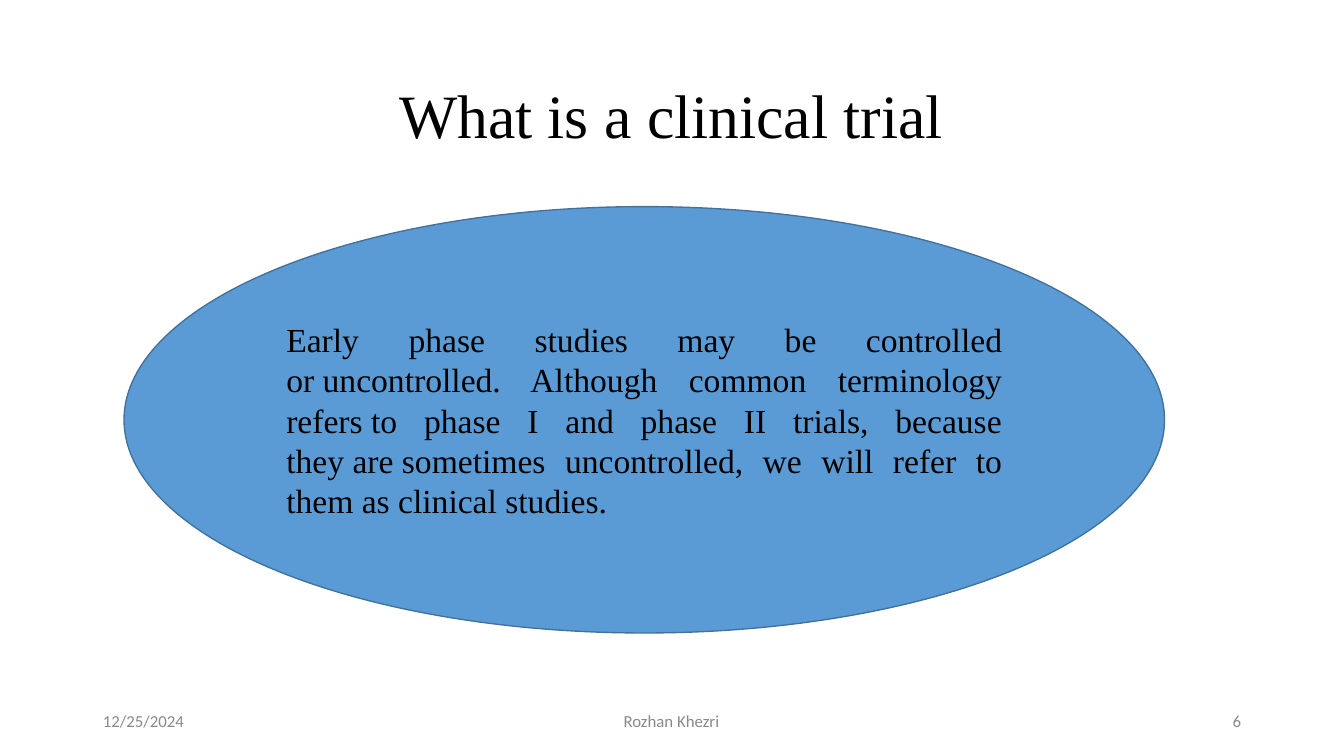
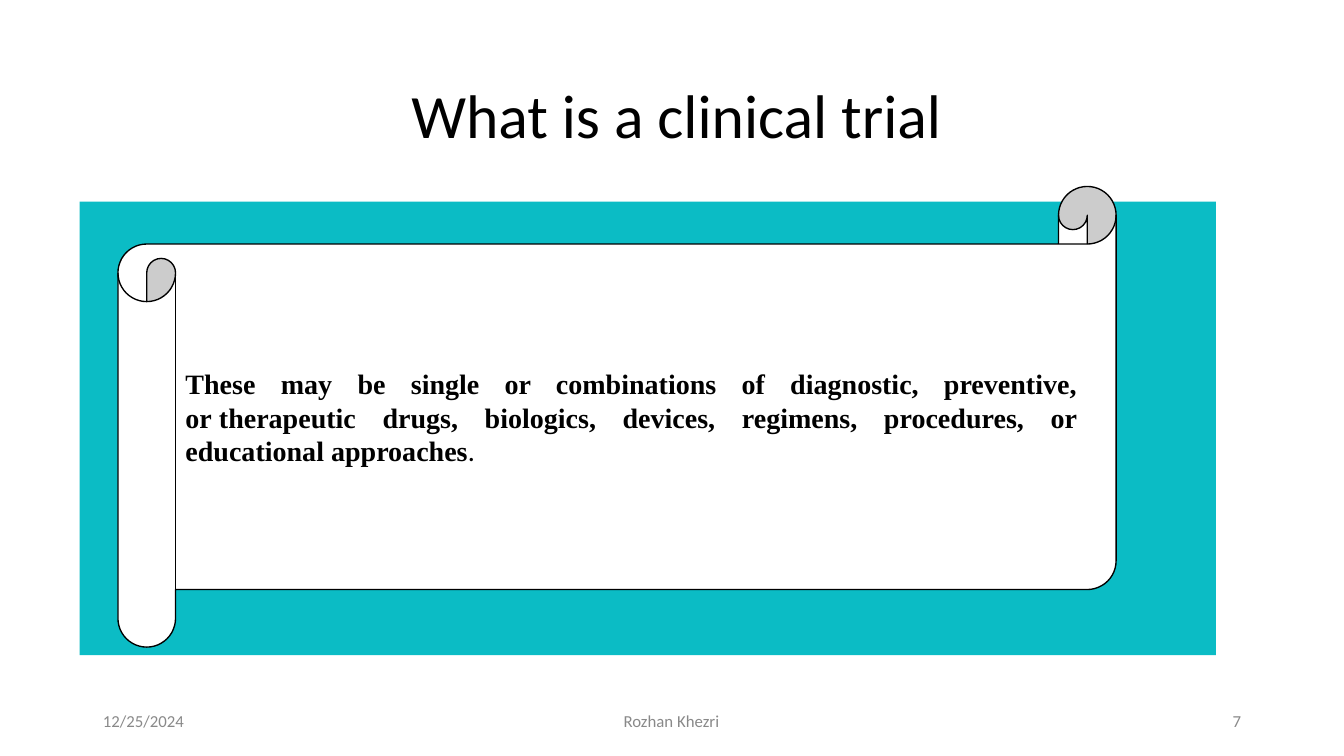
from pptx import Presentation
from pptx.dml.color import RGBColor
from pptx.enum.shapes import MSO_SHAPE
from pptx.enum.text import MSO_ANCHOR, PP_ALIGN
from pptx.util import Inches, Pt

SERIF, SANS = "Times New Roman", "Calibri"
BLACK, WHITE, GREY = "000000", "FFFFFF", "898989"
BLUE, NAVY, TEAL = "5B9BD5", "41719C", "0BBCC5"
TITLE = "What is a clinical trial"


def tint(code):
    """Turn a hex string into a colour."""
    return RGBColor.from_string(code)


def add_run(para, text, size, font=SANS, code=BLACK, bold=False):
    """Add one styled run, with ~ as a space that does not break."""
    run = para.add_run()
    run.text = text.replace("~", chr(160))
    run.font.size = Pt(size)
    run.font.name = font
    run.font.bold = bold
    run.font.color.rgb = tint(code)


def add_label(slide, box, text, size, font, code, align):
    """Add a single line of text without margins."""
    frame = slide.shapes.add_textbox(*map(Inches, box)).text_frame
    frame.word_wrap = True
    frame.margin_left = frame.margin_right = 0
    frame.margin_top = frame.margin_bottom = 0
    para = frame.paragraphs[0]
    para.alignment = align
    add_run(para, text, size, font, code)


def add_form(slide, kind, box, fill, line=None):
    """Add a filled preset shape, outlined if a line colour is given."""
    form = slide.shapes.add_shape(kind, *map(Inches, box))
    form.shadow.inherit = False
    form.fill.solid()
    form.fill.fore_color.rgb = tint(fill)
    if line:
        form.line.color.rgb = tint(line)
        form.line.width = Pt(0.96)
    else:
        form.line.fill.background()
    return form


def add_body(form, size, runs):
    """Write justified runs of (text, font, bold) inside a shape."""
    frame = form.text_frame
    frame.word_wrap = True
    frame.vertical_anchor = MSO_ANCHOR.MIDDLE
    para = frame.paragraphs[0]
    para.alignment = PP_ALIGN.JUSTIFY
    para.line_spacing = Pt(size * 1.2)
    for text, font, bold in runs:
        add_run(para, text, size, font, bold=bold)


def add_page(deck, number, font, left):
    """Add a slide with its title and footer."""
    slide = deck.slides.add_slide(deck.slide_layouts[6])
    add_label(slide, (left, 0.76, 6, 0.7), TITLE, 44, font, BLACK, PP_ALIGN.LEFT)
    feet = (
        (1.02, "12/25/2024", PP_ALIGN.LEFT),
        (5.16, "Rozhan Khezri", PP_ALIGN.CENTER),
        (9.31, str(number), PP_ALIGN.RIGHT),
    )
    for start, text, align in feet:
        add_label(slide, (start, 7.05, 3, 0.2), text, 12, SANS, GREY, align)
    return slide


def add_phase(deck):
    """Build the slide on early phase studies."""
    slide = add_page(deck, 6, SERIF, 3.96)
    oval = add_form(slide, MSO_SHAPE.OVAL, (1.23, 2.05, 10.32, 4.23), BLUE, NAVY)
    text = (
        "Early phase studies may be controlled or~uncontrolled. "
        "Although common terminology refers~to phase I and phase II trials, "
        "because they~are~sometimes uncontrolled, we will refer to them "
        "as~clinical studies."
    )
    add_body(oval, 24, [(text, SERIF, False)])


def add_means(deck):
    """Build the slide on kinds of intervention."""
    slide = add_page(deck, 7, SANS, 4.08)
    add_form(slide, MSO_SHAPE.RECTANGLE, (0.79, 2, 11.27, 4.5), TEAL)
    scroll = add_form(
        slide, MSO_SHAPE.HORIZONTAL_SCROLL, (1.17, 1.85, 9.9, 4.57), WHITE, BLACK
    )
    text = (
        "These may be single or combinations of diagnostic, preventive, "
        "or~therapeutic drugs, biologics, devices, regimens, procedures, "
        "or educational~approaches"
    )
    add_body(scroll, 20, [(text, SERIF, True), (".", SANS, False)])


def main():
    """Build and save the deck."""
    deck = Presentation()
    deck.slide_width, deck.slide_height = Inches(13.33), Inches(7.5)
    add_phase(deck)
    add_means(deck)
    deck.save("out.pptx")


if __name__ == "__main__":
    main()
